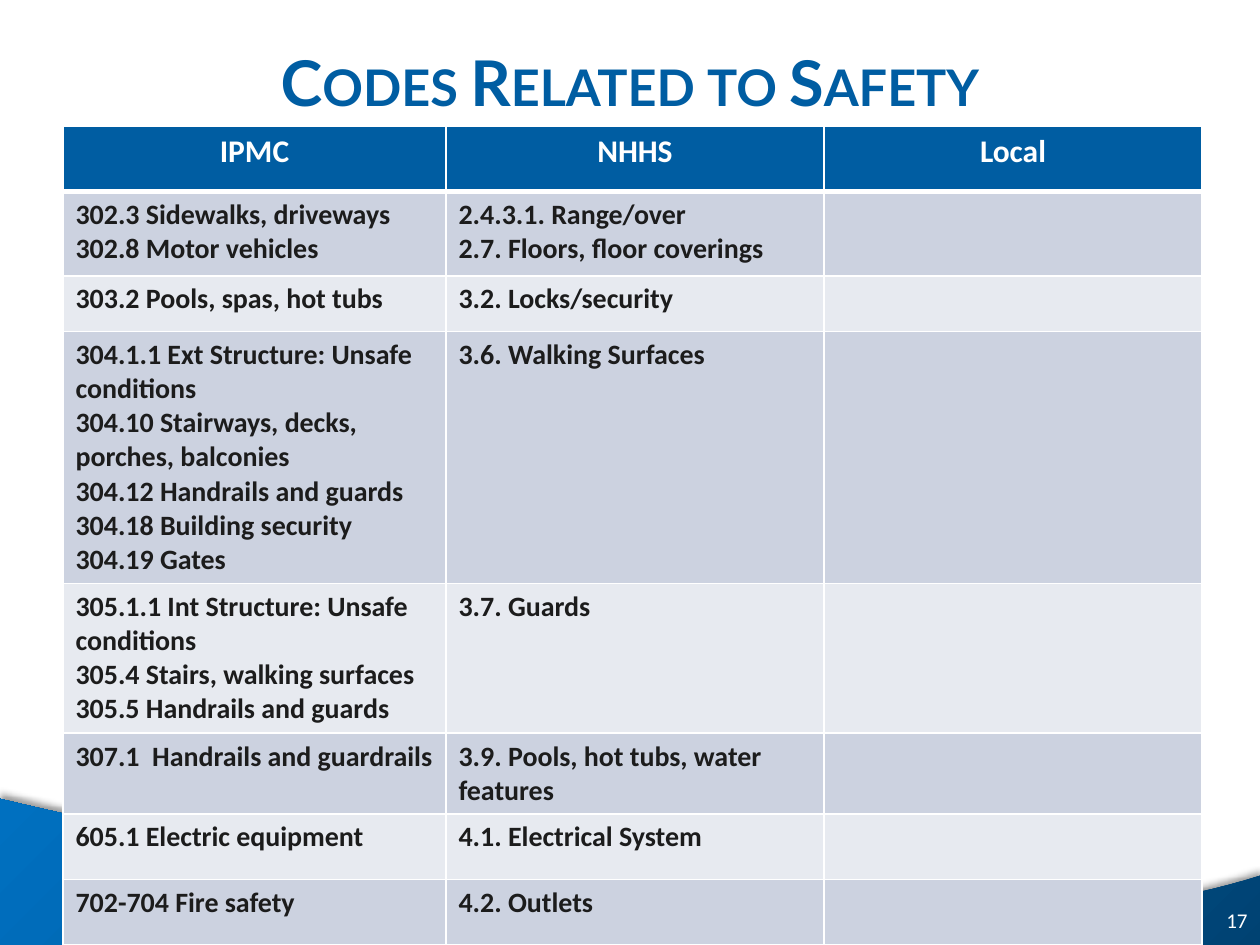
import pptx
import pptx.util
import pptx.dml.color
import pptx.enum.text
import pptx.oxml
import pptx.oxml.ns

Inches, Pt = pptx.util.Inches, pptx.util.Pt
RGB = pptx.dml.color.RGBColor
ALIGN = pptx.enum.text.PP_ALIGN
MIDDLE = pptx.enum.text.MSO_ANCHOR.MIDDLE
NS = pptx.oxml.ns.nsdecls("a")

BLUE = RGB(0x00, 0x5D, 0xA2)
WHITE = RGB(0xFF, 0xFF, 0xFF)
INK = RGB(0x1C, 0x1C, 0x1C)
BANDS = RGB(0xCC, 0xD2, 0xE0), RGB(0xE7, 0xEA, 0xF0)
WAVE = [(0, RGB(0x00, 0x42, 0x72)), (50, RGB(0x00, 0x5E, 0xA2)),
        (100, RGB(0x00, 0x70, 0xC0))]

TITLE = "Codes Related to Safety"
PAGE = "17"
HEAD = ["IPMC", "NHHS", "Local"]
# Each row: height, then the lines of its cells
ROWS = [
    (0.67, ["302.3 Sidewalks, driveways", "302.8 Motor vehicles"],
     ["2.4.3.1. Range/over", "2.7. Floors, floor coverings"]),
    (0.44, ["303.2 Pools, spas, hot tubs"], ["3.2. Locks/security"]),
    (2.0, ["304.1.1 Ext Structure: Unsafe conditions",
           "304.10 Stairways, decks, porches, balconies",
           "304.12 Handrails and guards",
           "304.18 Building security",
           "304.19 Gates"],
     ["3.6. Walking Surfaces"]),
    (1.19, ["305.1.1 Int Structure: Unsafe conditions",
            "305.4 Stairs, walking surfaces",
            "305.5 Handrails and guards"],
     ["3.7. Guards"]),
    (0.64, ["307.1  Handrails and guardrails"],
     ["3.9. Pools, hot tubs, water features"]),
    (0.52, ["605.1 Electric equipment"], ["4.1. Electrical System"]),
    (0.52, ["702-704 Fire safety"], ["4.2. Outlets"]),
]
HEAD_H = 0.52
COLS = [3.04, 3, 3]
LEFT, TOP = 0.5, 1


def style(frame, font, size, color, bold, align):
    for para in frame.paragraphs:
        para.alignment = align
        para.font.name, para.font.size = font, Pt(size)
        para.font.bold = bold
        para.font.color.rgb = color
        for run in para.runs:
            run.font.name, run.font.size = font, Pt(size)
            run.font.bold = bold
            run.font.color.rgb = color


def add_text(slide, box, text, font, size, color, bold, align):
    frame = slide.shapes.add_textbox(*map(Inches, box)).text_frame
    frame.word_wrap = True
    frame.vertical_anchor = MIDDLE
    frame.text = text
    style(frame, font, size, color, bold, align)
    return frame


def curve(points, steps=60):
    """Sample a cubic curve given by its four points."""
    for i in range(steps + 1):
        t = i / steps
        parts = (1 - t) ** 3, 3 * t * (1 - t) ** 2, 3 * t * t * (1 - t), t ** 3
        yield tuple(sum(w * p[axis] for w, p in zip(parts, points))
                    for axis in (0, 1))


def add_wave(slide):
    edge = list(curve([(0, 6.34), (3.22, 7.11), (7.62, 7.71), (10, 6.95)]))
    edge += [(10.02, 7.23), (10.04, 7.51), (0, 7.51)]
    pen = slide.shapes.build_freeform(*map(Inches, edge[0]))
    pen.add_line_segments([tuple(map(Inches, p)) for p in edge[1:]])
    wave = pen.convert_to_shape()
    wave.line.fill.background()
    stops = "".join(f'<a:gs pos="{pos * 1000}"><a:srgbClr val="{color}"/></a:gs>'
                    for pos, color in WAVE)
    props = wave.fill._xPr
    props.insert(2, pptx.oxml.parse_xml(
        f'<a:gradFill {NS} rotWithShape="1"><a:gsLst>{stops}</a:gsLst>'
        '<a:lin ang="13500000" scaled="0"/></a:gradFill>'))
    props.append(pptx.oxml.parse_xml(
        f'<a:effectLst {NS}><a:outerShdw blurRad="{Pt(4)}" dist="{Pt(3)}" '
        'dir="16200000"><a:srgbClr val="000000"><a:alpha val="40000"/>'
        '</a:srgbClr></a:outerShdw></a:effectLst>'))


def fill_cell(cell, lines, fill, look, rule):
    """Put in the text, the white borders and the fill; rule is the bottom width."""
    cell.text_frame.text = "\n".join(lines)
    style(cell.text_frame, "Calibri", *look)
    props = cell._tc.get_or_add_tcPr()
    for side, width in zip("LRTB", (1, 1, 1, rule)):
        props.append(pptx.oxml.parse_xml(
            f'<a:ln{side} {NS} w="{Pt(width)}"><a:solidFill>'
            f'<a:srgbClr val="{WHITE}"/></a:solidFill></a:ln{side}>'))
    cell.fill.solid()
    cell.fill.fore_color.rgb = fill


def add_codes(slide):
    heights = [HEAD_H] + [row[0] for row in ROWS]
    size = sum(COLS), sum(heights)
    table = slide.shapes.add_table(len(heights), len(COLS), *map(
        Inches, (LEFT, TOP, *size))).table
    for col, width in zip(table.columns, COLS):
        col.width = Inches(width)
    for row, height in zip(table.rows, heights):
        row.height = Inches(height)
    for c, name in enumerate(HEAD):
        fill_cell(table.cell(0, c), [name], BLUE,
                  (18, WHITE, True, ALIGN.CENTER), 3)
    for r, (_, *cells) in enumerate(ROWS):
        for c, lines in enumerate([*cells, []]):
            fill_cell(table.cell(r + 1, c), lines, BANDS[r % 2],
                      (16, INK, True, ALIGN.LEFT), 1)
    for c in range(len(COLS)):
        top = table.cell(1, c)._tc.tcPr.find(pptx.oxml.ns.qn("a:lnT"))
        top.set("w", str(Pt(3)))


def main():
    deck = pptx.Presentation()
    deck.slide_width, deck.slide_height = Inches(10), Inches(7.5)
    slide = deck.slides.add_slide(deck.slide_layouts[6])
    add_wave(slide)
    title = add_text(slide, (0, 0.02, 10, 1.25), TITLE, "Lato", 36, BLUE,
                     True, ALIGN.CENTER)
    title.paragraphs[0].runs[0].font._element.set("cap", "small")
    add_codes(slide)
    add_text(slide, (9.47, 7.1, 0.53, 0.4), PAGE, "Calibri", 12, WHITE,
             False, ALIGN.RIGHT)
    deck.save("out.pptx")


if __name__ == "__main__":
    main()
